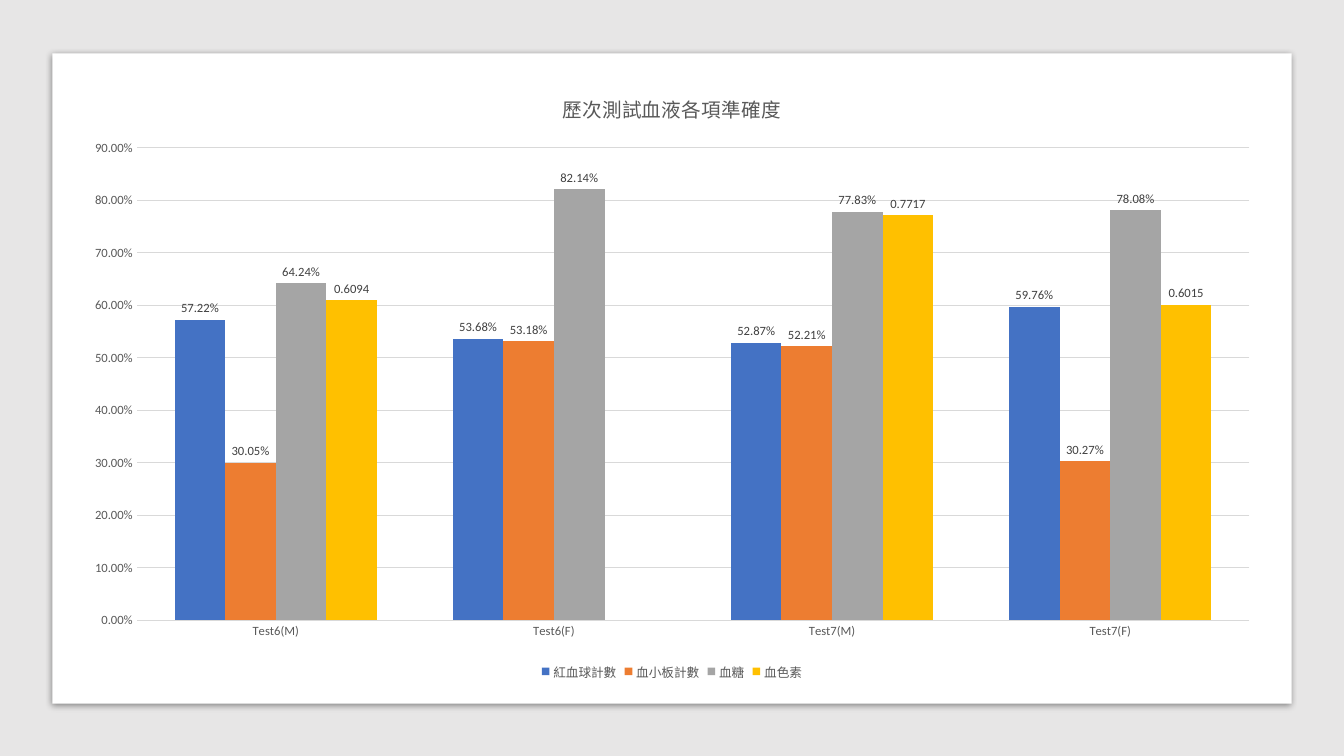
from lxml.etree import SubElement
from pptx import Presentation
from pptx.chart.data import CategoryChartData
from pptx.dml.color import RGBColor
from pptx.enum.chart import XL_CHART_TYPE, XL_LABEL_POSITION, XL_LEGEND_POSITION, XL_TICK_MARK
from pptx.enum.shapes import MSO_SHAPE
from pptx.oxml import parse_xml
from pptx.oxml.ns import nsdecls, qn
from pptx.util import Inches, Pt

COLORS = {
    "backdrop": "E7E6E6", "card": "FFFFFF", "shadow": "000000",
    "text": "595959", "label": "404040", "grid": "D9D9D9",
}
PERCENT = "0.00%"
TESTS = ["Test6(M)", "Test6(F)", "Test7(M)", "Test7(F)"]
# name, accuracy per test, colour, label format
MEASURES = [
    ("紅血球計數", [0.5722, 0.5368, 0.5287, 0.5976], "4472C4", PERCENT),
    ("血小板計數", [0.3005, 0.5318, 0.5221, 0.3027], "ED7D31", PERCENT),
    ("血糖", [0.6424, 0.8214, 0.7783, 0.7808], "A5A5A5", PERCENT),
    ("血色素", [0.6094, None, 0.7717, 0.6015], "FFC000", "General"),
]


def rgb(name):
    return RGBColor.from_string(COLORS.get(name, name))


class SlideBuilder:
    font_name = "Calibri"

    def __init__(self, slide):
        self.slide = slide

    def style_font(self, font, size, color):
        font.name = self.font_name
        font.size = Pt(size)
        font.bold = False
        font.color.rgb = rgb(color)

    def panel(self, left, top, width, height, color):
        panel = self.slide.shapes.add_shape(
            MSO_SHAPE.RECTANGLE, Inches(left), Inches(top), Inches(width), Inches(height))
        panel.shadow.inherit = False
        panel.fill.solid()
        panel.fill.fore_color.rgb = rgb(color)
        panel.line.fill.background()
        return panel

    def drop_shadow(self, panel, blur, distance, opacity):
        """Cast a shadow straight down; lengths in points, opacity in percent."""
        effects = panel._element.spPr.find(qn("a:effectLst"))
        effects.append(parse_xml(
            f'<a:outerShdw {nsdecls("a")} blurRad="{Pt(blur)}" dist="{Pt(distance)}" '
            f'dir="5400000" algn="t" rotWithShape="0"><a:srgbClr val="{COLORS["shadow"]}">'
            f'<a:alpha val="{opacity * 1000}"/></a:srgbClr></a:outerShdw>'))

    def column_chart(self, left, top, width, height, title, categories, measures):
        data = CategoryChartData(number_format=PERCENT)
        data.categories = categories
        for name, values, _, number_format in measures:
            data.add_series(name, values, number_format)
        chart = self.slide.shapes.add_chart(
            XL_CHART_TYPE.COLUMN_CLUSTERED, Inches(left), Inches(top),
            Inches(width), Inches(height), data).chart
        self.style_font(chart.font, 10, "shadow")

        chart.has_title = True
        heading = chart.chart_title.text_frame
        heading.text = title
        self.style_font(heading.paragraphs[0].runs[0].font, 14, "text")
        chart.chart_title.include_in_layout = False

        chart.has_legend = True
        chart.legend.position = XL_LEGEND_POSITION.BOTTOM
        chart.legend.include_in_layout = False
        self.style_font(chart.legend.font, 9, "text")

        self.style_axes(chart)
        plot = chart.plots[0]
        plot.gap_width = 150
        plot.overlap = 0
        plot.vary_by_categories = False
        for series, (_, _, color, number_format) in zip(plot.series, measures):
            series.format.fill.solid()
            series.format.fill.fore_color.rgb = rgb(color)
            series.invert_if_negative = False
            labels = series.data_labels
            labels.show_value = True
            labels.position = XL_LABEL_POSITION.OUTSIDE_END
            labels.number_format = number_format
            labels.number_format_is_linked = False
            self.style_font(labels.font, 9, "label")
        return chart

    def style_axes(self, chart):
        for axis in (chart.category_axis, chart.value_axis):
            axis.major_tick_mark = axis.minor_tick_mark = XL_TICK_MARK.NONE
            axis.format.line.fill.background()
            self.style_font(axis.tick_labels.font, 9, "text")
        accuracy = chart.value_axis
        accuracy.minimum_scale, accuracy.maximum_scale = 0, 0.9
        accuracy.major_unit = 0.1
        accuracy.tick_labels.number_format = PERCENT
        accuracy.tick_labels.number_format_is_linked = False
        accuracy.has_major_gridlines = True
        accuracy.major_gridlines.format.line.color.rgb = rgb("grid")
        accuracy.major_gridlines.format.line.width = Pt(0.75)

    def place_plot(self, chart, **box):
        """Fix the inner plot area as fractions x, y, w, h of the chart."""
        plot_area = chart._chartSpace.chart.plotArea
        for old_layout in plot_area.findall(qn("c:layout")):
            plot_area.remove(old_layout)
        layout = parse_xml(
            f'<c:layout {nsdecls("c")}><c:manualLayout><c:layoutTarget val="inner"/>'
            '<c:xMode val="edge"/><c:yMode val="edge"/></c:manualLayout></c:layout>')
        for key, fraction in box.items():
            SubElement(layout[0], qn(f"c:{key}")).set("val", str(fraction))
        plot_area.insert(0, layout)


def main():
    deck = Presentation()
    deck.slide_width, deck.slide_height = Inches(13.33), Inches(7.5)
    builder = SlideBuilder(deck.slides.add_slide(deck.slide_layouts[6]))
    builder.panel(0, 0, 13.33, 7.5, "backdrop")
    card = builder.panel(0.52, 0.53, 12.29, 6.45, "card")
    builder.drop_shadow(card, blur=5, distance=1.4, opacity=43)
    accuracy_chart = builder.column_chart(
        0.7, 0.7, 11.93, 6.09, "歷次測試血液各項準確度", TESTS, MEASURES)
    builder.place_plot(accuracy_chart, x=0.055, y=0.126, w=0.925, h=0.77)
    deck.save("out.pptx")


if __name__ == "__main__":
    main()
